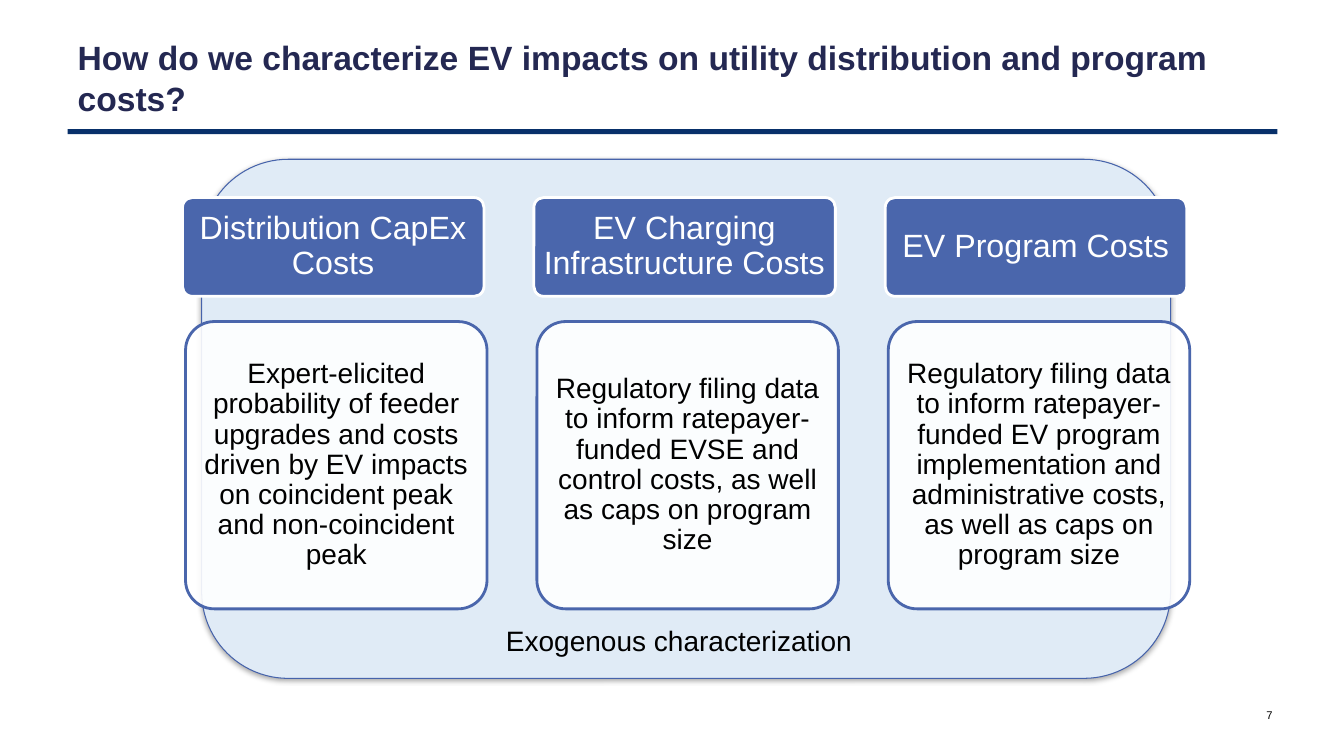
import pptx
import pptx.util
import pptx.oxml
import pptx.oxml.ns
import pptx.dml.color
import pptx.enum.shapes
import pptx.enum.text

Inches = pptx.util.Inches
Pt = pptx.util.Pt
RGBColor = pptx.dml.color.RGBColor
SHAPE = pptx.enum.shapes.MSO_SHAPE
ALIGN = pptx.enum.text.PP_ALIGN
ANCHOR = pptx.enum.text.MSO_ANCHOR

NAVY = RGBColor(0x24, 0x28, 0x52)
RULE = RGBColor(0x08, 0x30, 0x6A)
BLUE = RGBColor(0x4A, 0x66, 0xAC)
EDGE = RGBColor(0x46, 0x63, 0xAB)
PALE = RGBColor(0xE0, 0xEB, 0xF6)
WHITE = RGBColor(0xFF, 0xFF, 0xFF)
BLACK = RGBColor(0, 0, 0)

COSTS = [
    ("Distribution CapEx Costs",
     "Expert-elicited probability of feeder upgrades and costs driven by EV "
     "impacts on coincident peak and non-coincident peak"),
    ("EV Charging Infrastructure Costs",
     "Regulatory filing data to inform ratepayer-funded EVSE and control "
     "costs, as well as caps on program size"),
    ("EV Program Costs",
     "Regulatory filing data to inform ratepayer-funded EV program "
     "implementation and administrative costs, as well as caps on program size"),
]


def place(box):
    """Turn a box in inches into lengths."""
    return [Inches(size) for size in box]


def write(shape, text, size, color, align=ALIGN.CENTER, anchor=ANCHOR.MIDDLE,
          pad=(0.1, 0.05), space=1.0, bold=False):
    """Write one paragraph into a shape."""
    frame = shape.text_frame
    frame.word_wrap = True
    frame.auto_size = pptx.enum.text.MSO_AUTO_SIZE.NONE
    frame.vertical_anchor = anchor
    frame.margin_left = frame.margin_right = Inches(pad[0])
    frame.margin_top = frame.margin_bottom = Inches(pad[1])
    para = frame.paragraphs[0]
    para.alignment = align
    para.line_spacing = space
    run = para.add_run()
    run.text = text
    run.font.name = "Arial"
    run.font.size = Pt(size)
    run.font.bold = bold
    run.font.color.rgb = color


def block(slide, kind, box, fill, line=None, width=0.75):
    """Add a filled shape without a theme shadow."""
    shape = slide.shapes.add_shape(kind, *place(box))
    shape.shadow.inherit = False
    shape.fill.solid()
    shape.fill.fore_color.rgb = fill
    if line is None:
        shape.line.fill.background()
    else:
        shape.line.color.rgb = line
        shape.line.width = Pt(width)
    return shape


def label(slide, box, text, size, align):
    """Add a text box in black."""
    shape = slide.shapes.add_textbox(*place(box))
    write(shape, text, size, BLACK, align)


def fade(shape, alpha):
    """Set the opacity of a solid fill in percent."""
    color = shape.fill._xPr.find(".//" + pptx.oxml.ns.qn("a:srgbClr"))
    color.append(pptx.oxml.parse_xml(
        f'<a:alpha {pptx.oxml.ns.nsdecls("a")} val="{alpha * 1000}"/>'))


def shade(shape):
    """Drop a soft shadow below a shape."""
    effects = shape._element.spPr.find(pptx.oxml.ns.qn("a:effectLst"))
    effects.append(pptx.oxml.parse_xml(
        f'<a:outerShdw {pptx.oxml.ns.nsdecls("a")} blurRad="{Pt(3.1)}" '
        f'dist="{Pt(1.8)}" dir="5400000" rotWithShape="0">'
        '<a:srgbClr val="000000"><a:alpha val="35000"/></a:srgbClr>'
        '</a:outerShdw>'))


def header(slide, box, text):
    """Place the title and the rule below it."""
    left, top, width, height = box
    block(slide, SHAPE.RECTANGLE, (left, top + 0.97, width, 0.05), RULE)
    title = slide.shapes.title
    title.left, title.top, title.width, title.height = place(box)
    write(title, text, 24, NAVY, ALIGN.LEFT, ANCHOR.BOTTOM, bold=True)


def column(slide, box, name, note):
    """Place a cost heading above its description."""
    left, top, width, height = box
    head = block(slide, SHAPE.ROUNDED_RECTANGLE, (left, top, width, 0.98),
                 BLUE, WHITE, 2)
    head.adjustments[0] = 0.1
    write(head, name, 23, WHITE, pad=(0.05, 0.03), space=0.9)
    body = block(slide, SHAPE.ROUNDED_RECTANGLE,
                 (left + 0.03, top + 1.23, width, height - 1.23),
                 WHITE, BLUE, 2)
    body.adjustments[0] = 0.1
    fade(body, 90)
    write(body, note, 20, BLACK, pad=(0.04, 0.03), space=0.9)


def panel(slide, box):
    """Place the panel, its three columns and its caption."""
    left, top, width, height = box
    back = block(slide, SHAPE.ROUNDED_RECTANGLE, box, PALE, EDGE)
    shade(back)
    for index, (name, note) in enumerate(COSTS):
        column(slide, (left - 0.19 + index * 3.485, top + 0.38, 2.99, 4.08),
               name, note)
    label(slide, (left + 2.64, top + 4.55, 4.19, 0.44),
          "Exogenous characterization", 20, ALIGN.CENTER)


def main():
    """Build and save the slide."""
    deck = pptx.Presentation()
    deck.slide_width = Inches(13.33)
    deck.slide_height = Inches(7.5)
    slide = deck.slides.add_slide(deck.slide_layouts[5])
    header(slide, (0.67, 0.31, 12, 0.91),
           "How do we characterize EV impacts on utility distribution "
           "and program costs?")
    panel(slide, (2, 1.58, 9.61, 5.15))
    label(slide, (12.22, 6.89, 0.5, 0.4), "7", 8, ALIGN.RIGHT)
    deck.save("out.pptx")


if __name__ == "__main__":
    main()
